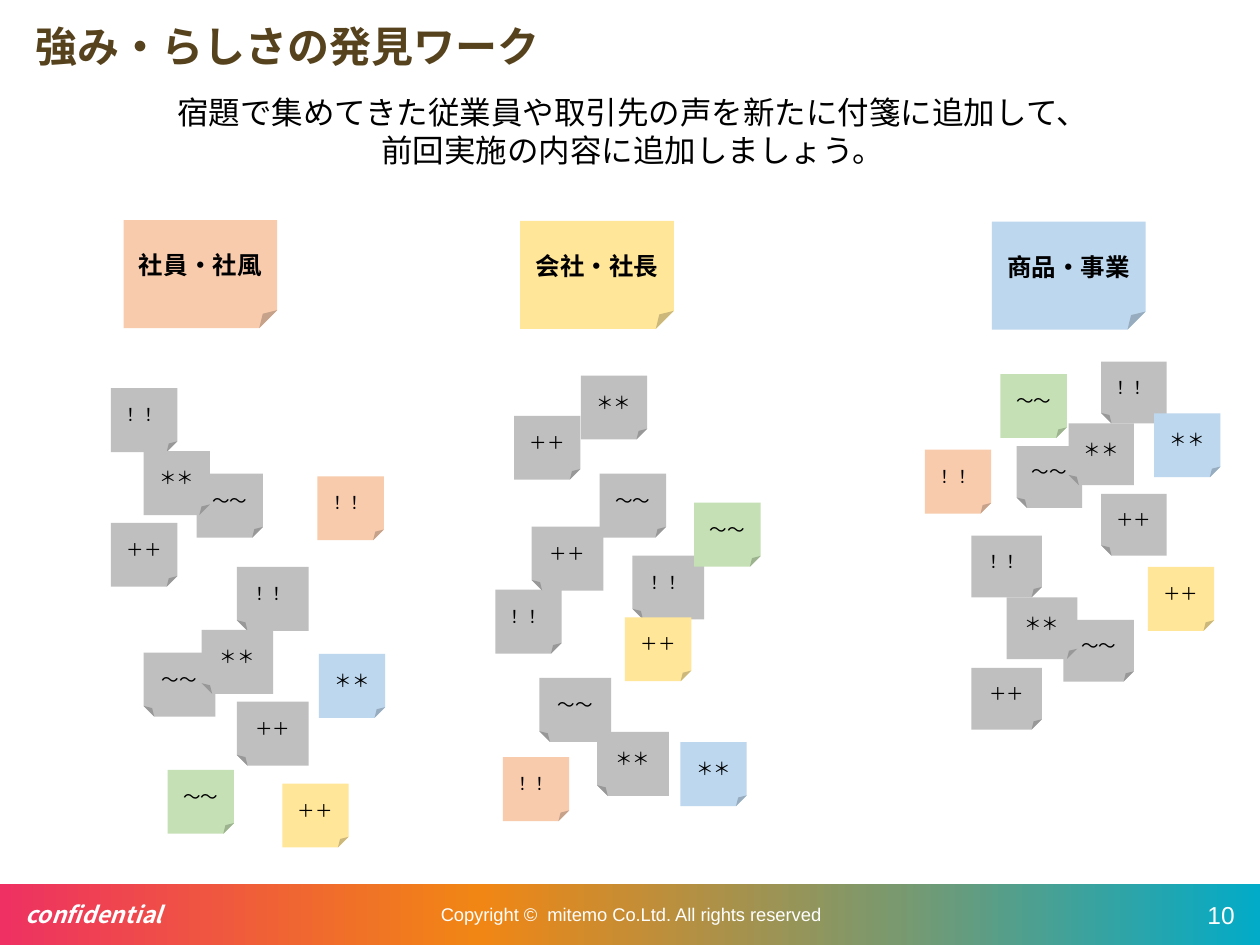
from lxml import etree
from pptx import Presentation
from pptx.dml.color import RGBColor as RGB
from pptx.enum.shapes import MSO_SHAPE as SHAPE
from pptx.enum.text import MSO_ANCHOR as ANCHOR, MSO_AUTO_SIZE as AUTO, PP_ALIGN as ALIGN
from pptx.oxml.ns import qn
from pptx.util import Pt

BLACK = RGB(0x00, 0x00, 0x00)
WHITE = RGB(0xFF, 0xFF, 0xFF)
BROWN = RGB(0x56, 0x43, 0x1E)
GRAY = RGB(0xBF, 0xBF, 0xBF)
PEACH = RGB(0xF8, 0xCB, 0xAD)
GREEN = RGB(0xC5, 0xE0, 0xB4)
BLUE = RGB(0xBD, 0xD7, 0xEE)
GOLD = RGB(0xFF, 0xE6, 0x99)
NOTO = "Noto Sans CJK JP"
CAL = "Calibri"


def style(frame, size, name, color, align, bold=False, slant=False):
    for para in frame.paragraphs:
        para.alignment = align
        for run in para.runs:
            font = run.font
            font.size, font.name = Pt(size), name
            font.bold, font.italic = bold, slant
            font.color.rgb = color
            east = etree.SubElement(run._r.get_or_add_rPr(), qn("a:ea"))
            east.set("typeface", name)


def add_note(box, text, fill, size, name, bold=False, flip=False):
    note = slide.shapes.add_shape(SHAPE.FOLDED_CORNER, *map(Pt, box))
    note.shadow.inherit = False
    note.fill.solid()
    note.fill.fore_color.rgb = fill
    note.line.fill.background()
    if flip:
        note._element.spPr.find(qn("a:xfrm")).set("flipH", "1")
    frame = note.text_frame
    frame.text = text
    frame.vertical_anchor = ANCHOR.MIDDLE
    style(frame, size, name, BLACK, ALIGN.CENTER, bold)


deck = Presentation()
deck.slide_width, deck.slide_height = Pt(720), Pt(540)
slide = deck.slides.add_slide(deck.slide_layouts[5])

bar = slide.shapes.add_shape(SHAPE.RECTANGLE, Pt(0), Pt(505.2), Pt(720), Pt(34.8))
bar.shadow.inherit = False
bar.line.fill.background()
bar.fill.gradient()
bar.fill.gradient_angle = 0
stops = bar._element.spPr.find(qn("a:gradFill")).find(qn("a:gsLst"))
for stop in list(stops):
    stops.remove(stop)
for pos, tint in [(0, "EE3162"), (38, "F18614"), (71, "7A996E"), (100, "02ABC8")]:
    stop = etree.SubElement(stops, qn("a:gs"), pos=str(pos * 1000))
    etree.SubElement(stop, qn("a:srgbClr"), val=tint)

for left, width, text, size, name, align, bold in [
    (0, 110.9, "confidential", 13.2, NOTO, ALIGN.LEFT, True),
    (218.2, 285.1, "Copyright ©  mitemo Co.Ltd. All rights reserved", 10.5, "Arial", ALIGN.CENTER, False),
    (665.3, 54.7, "10", 14, "Arial", ALIGN.RIGHT, False),
]:
    box = slide.shapes.add_textbox(Pt(left), Pt(505.2), Pt(width), Pt(34.8))
    frame = box.text_frame
    frame.text = text
    frame.word_wrap = True
    frame.vertical_anchor = ANCHOR.MIDDLE
    frame.margin_left = frame.margin_right = Pt(14.4)
    frame.margin_top = frame.margin_bottom = Pt(2.9)
    style(frame, size, name, WHITE, align, bold, slant=bold)

title = slide.shapes.title
title.left, title.top, title.width, title.height = Pt(14.4), Pt(13.7), Pt(692), Pt(23)
frame = title.text_frame
frame.text = "強み・らしさの発見ワーク"
frame.auto_size = AUTO.NONE
frame.vertical_anchor = ANCHOR.MIDDLE
frame.margin_left = frame.margin_right = frame.margin_bottom = Pt(5.7)
frame.margin_top = Pt(11.5)
frame.paragraphs[0].line_spacing = 0.9
style(frame, 24, NOTO, BROWN, ALIGN.LEFT, True)

marks = [("！！", CAL, PEACH), ("〜〜", NOTO, GREEN), ("＊＊", CAL, BLUE), ("＋＋", NOTO, GOLD)]
sets = [
    (37.9, 36.5, False, True, [(63.4, 221.8), (112.3, 270.7), (82.1, 257.8), (63.4, 298.8)]),
    (41, 36.5, True, True, [(135.4, 324), (82.1, 373), (115.2, 360), (135.4, 401)]),
    (37.9, 36.5, False, True, [(283, 337), (342.7, 270.7), (331.9, 214.6), (293.8, 237.6)]),
    (41, 36.5, True, True, [(361.4, 317.5), (308.2, 387.4), (341.3, 418.3), (303.8, 301)]),
    (37.4, 35.3, True, True, [(629.3, 206.6), (581, 254.9), (610.6, 241.9), (629.3, 282.2)]),
    (40.3, 35.3, False, True, [(555.1, 306), (607.7, 354.2), (575.3, 341.3), (555.1, 381.6)]),
    (37.9, 36.5, False, False, [(181.4, 272.2), (95.8, 439.9), (182.2, 373.7), (161.3, 447.8)]),
    (37.9, 36.5, False, False, [(287.3, 432.7), (396.7, 287.3), (388.8, 424.1), (357.1, 352.8)]),
    (37.9, 36.5, False, False, [(528.5, 257), (571.7, 213.8), (659.5, 236.2), (655.9, 324)]),
]
for width, height, flip, old, spots in sets:
    for (left, top), (mark, name, tint) in zip(spots, marks):
        add_note((left, top, width, height), mark, GRAY if old else tint, 10, name, flip=flip)

for left, top, text, fill in [
    (70.6, 125.8, "社員・社風", PEACH),
    (297.2, 126.2, "会社・社長", GOLD),
    (566.8, 126.6, "商品・事業", BLUE),
]:
    add_note((left, top, 87.8, 61.7), text, fill, 14, CAL, bold=True)

lead = slide.shapes.add_textbox(Pt(90.7), Pt(49.7), Pt(541.4), Pt(51))
frame = lead.text_frame
frame.text = "宿題で集めてきた従業員や取引先の声を新たに付箋に追加して、\n前回実施の内容に追加しましょう。"
frame.word_wrap = False
frame.auto_size = AUTO.SHAPE_TO_FIT_TEXT
style(frame, 18, CAL, BLACK, ALIGN.CENTER)

deck.save("out.pptx")
